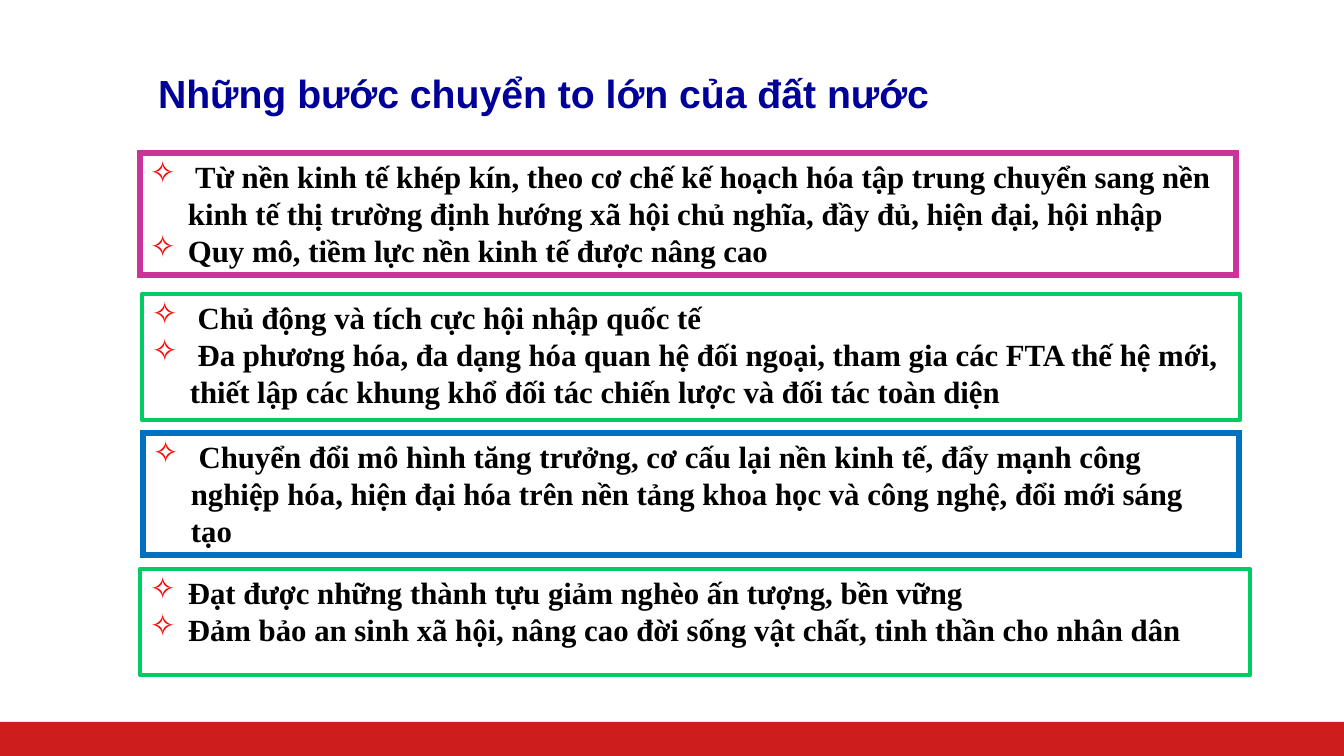
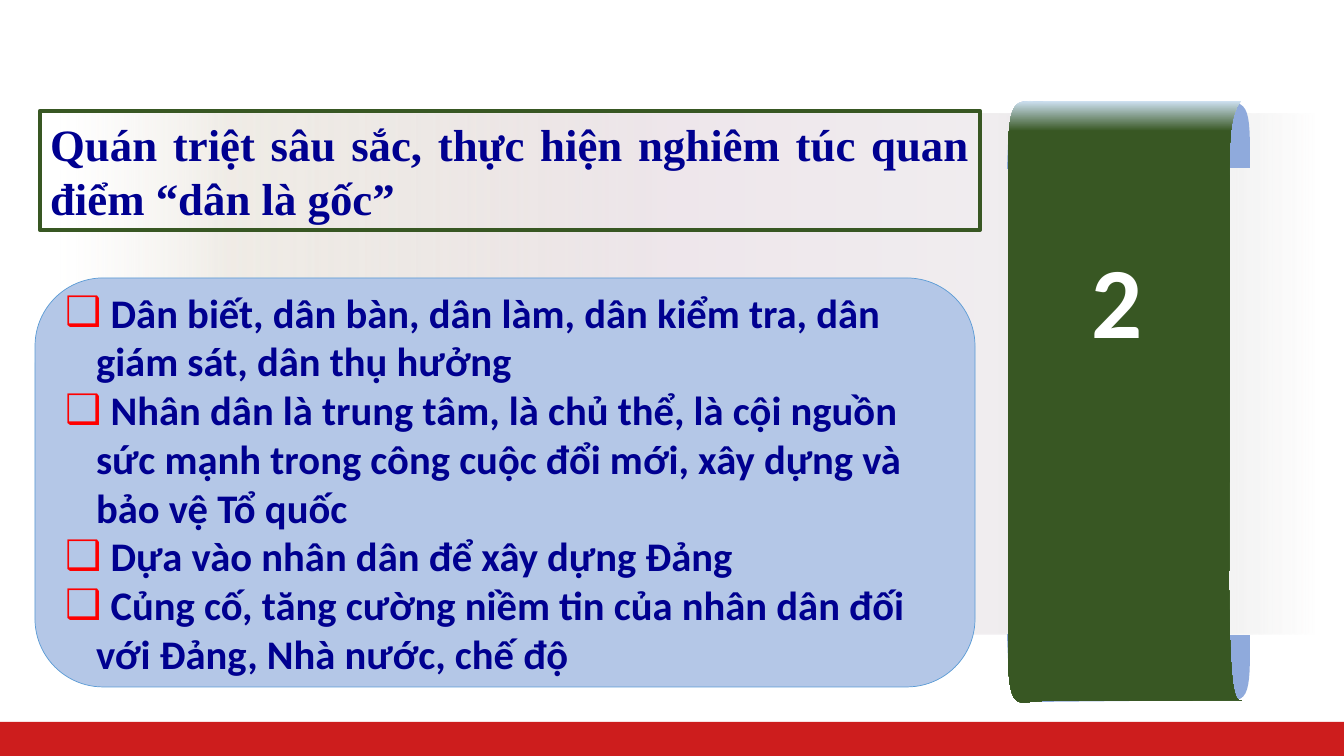
from lxml import etree
from pptx import Presentation
from pptx.dml.color import RGBColor
from pptx.enum.shapes import MSO_SHAPE as Preset
from pptx.enum.text import MSO_ANCHOR as Anchor, MSO_AUTO_SIZE as AutoSize, PP_ALIGN as Align
from pptx.oxml.ns import qn
from pptx.util import Emu, Pt

EMU_PER_PX = 12192000 / 1344
SLIDE_SIZE = (1344, 756)
COLORS = {
    "band": "CD1D1D", "title": "000099", "heading": "000090", "text": "000000",
    "white": "FFFFFF", "bullet": "FF0000", "magenta": "CC3399", "green": "00CC66",
    "blue": "0070C0", "ribbon": "385723", "curl": "8FAADC",
    "card": "B4C7E7", "card_edge": "5B9BD5",
}
# Gradient stops: position, colour, opacity (all but colour in percent)
PANEL_STOPS = [(0, "C8C7C6", 0), (25, "F0EDEF", 100), (50, "EEE6EB", 100),
               (85, "E2DCD1", 52), (98, "EFEBE5", 0)]
RIBBON_STOPS = [(0, "B5D2EC", 100), (0, "CEE1F2", 100), (5, COLORS["ribbon"], 100)]

# Outlines in px from the ribbon's corner: a pair is a corner, a six is a curve
CURL = [(243, 67), (223, 67), (0, 68), (2, 13, 3, -1, 23, 0),
        (226, 2), (244, 1, 243, 23, 243, 67)]
RIBBON = [(234, 0), (42, 0), (9, 3, 1, -15, 1, 68), (1, 507),
          (-1, 621, 7, 600, 35, 600), (235, 599), (226, 603, 223, 580, 222, 486),
          (223, 135), (223, 55, 219, 18, 234, 0)]
RIBBON_HEIGHT = 601

# Box, edge colour, edge width in points, items
CHANGES = [
    ((140, 153, 1096, 122), "magenta", 4.5, [
        " Từ nền kinh tế khép kín, theo cơ chế kế hoạch hóa tập trung chuyển sang nền kinh tế thị trường định hướng xã hội chủ nghĩa, đầy đủ, hiện đại, hội nhập",
        "Quy mô, tiềm lực nền kinh tế được nâng cao"]),
    ((142, 294, 1098, 126), "green", 3, [
        " Chủ động và tích cực hội nhập quốc tế",
        " Đa phương hóa, đa dạng hóa quan hệ đối ngoại, tham gia các FTA thế hệ mới, thiết lập các khung khổ đối tác chiến lược và đối tác toàn diện"]),
    ((143, 433, 1096, 122), "blue", 4.5, [
        " Chuyển đổi mô hình tăng trưởng, cơ cấu lại nền kinh tế, đẩy mạnh công nghiệp hóa, hiện đại hóa trên nền tảng khoa học và công nghệ, đổi mới sáng tạo"]),
    ((140, 569, 1110, 106), "green", 3, [
        "Đạt được những thành tựu giảm nghèo ấn tượng, bền vững",
        "Đảm bảo an sinh xã hội, nâng cao đời sống vật chất, tinh thần cho nhân dân"]),
]
PEOPLE = [
    " Dân biết, dân bàn, dân làm, dân kiểm tra, dân giám sát, dân thụ hưởng",
    " Nhân dân là trung tâm, là chủ thể, là cội nguồn sức mạnh trong công cuộc đổi mới, xây dựng và bảo vệ Tổ quốc",
    " Dựa vào nhân dân để xây dựng Đảng",
    " Củng cố, tăng cường niềm tin của nhân dân đối với Đảng, Nhà nước, chế độ",
]


def px(length):
    return Emu(round(length * EMU_PER_PX))


def rgb(name):
    return RGBColor.from_string(COLORS[name])


def place(shape, box):
    shape.left, shape.top, shape.width, shape.height = map(px, box)


def paint(shape, fill=None, edge=None, width=1):
    if fill:
        shape.fill.solid()
        shape.fill.fore_color.rgb = rgb(fill)
    else:
        shape.fill.background()
    if edge:
        shape.line.color.rgb = rgb(edge)
        shape.line.width = Pt(width)
    else:
        shape.line.fill.background()


def paint_gradient(shape, stops, angle):
    shape.line.fill.background()
    shape.fill.gradient()
    gradient = shape.element.spPr.find(qn("a:gradFill"))
    stop_list = gradient.find(qn("a:gsLst"))
    for old in list(stop_list):
        stop_list.remove(old)
    for position, color, opacity in stops:
        stop = etree.SubElement(stop_list, qn("a:gs"), pos=str(position * 1000))
        tint = etree.SubElement(stop, qn("a:srgbClr"), val=color)
        if opacity < 100:
            etree.SubElement(tint, qn("a:alpha"), val=str(opacity * 1000))
    gradient.find(qn("a:lin")).set("ang", str(angle * 60000))


def add_preset(slide, preset, box):
    shape = slide.shapes.add_shape(preset, *map(px, box))
    shape.shadow.inherit = False
    return shape


def add_outline(slide, corner, outline):
    """Draw a closed outline, flattening its Bézier curves."""
    points = [outline[0]]
    for step in outline[1:]:
        if len(step) == 2:
            points.append(step)
            continue
        controls = [points[-1], step[:2], step[2:4], step[4:]]
        for i in range(1, 13):
            t = i / 12
            weights = ((1 - t) ** 3, 3 * t * (1 - t) ** 2, 3 * t * t * (1 - t), t ** 3)
            points.append(tuple(sum(w * c[axis] for w, c in zip(weights, controls))
                                for axis in (0, 1)))
    vertices = [(px(corner[0] + x), px(corner[1] + y)) for x, y in points]
    builder = slide.shapes.build_freeform(*vertices[0])
    builder.add_line_segments(vertices[1:], close=True)
    shape = builder.convert_to_shape()
    shape.shadow.inherit = False
    return shape


def style(paragraph, font, size, color, align=Align.LEFT, spacing=1.0):
    paragraph.alignment = align
    paragraph.line_spacing = spacing
    paragraph.space_before = Pt(0)
    paragraph.font.name = font
    paragraph.font.size = Pt(size)
    paragraph.font.bold = True
    paragraph.font.color.rgb = rgb(color)


def write_bullets(shape, items, mark, indent, anchor, **look):
    frame = shape.text_frame
    frame.word_wrap = True
    frame.auto_size = AutoSize.NONE
    frame.vertical_anchor = anchor
    for i, item in enumerate(items):
        paragraph = frame.add_paragraph() if i else frame.paragraphs[0]
        paragraph.text = item
        properties = paragraph._p.get_or_add_pPr()
        properties.set("marL", str(px(indent)))
        properties.set("indent", str(-px(indent)))
        bullet_color = etree.SubElement(properties, qn("a:buClr"))
        etree.SubElement(bullet_color, qn("a:srgbClr"), val=COLORS["bullet"])
        etree.SubElement(properties, qn("a:buChar"), char=mark)
        style(paragraph, **look)


def write_title(slide, box, text, **look):
    title = slide.shapes.title
    place(title, box)
    title.text = text
    title.text_frame.word_wrap = True
    title.text_frame.auto_size = AutoSize.NONE
    title.text_frame.vertical_anchor = Anchor.MIDDLE
    style(title.text_frame.paragraphs[0], **look)
    return title


def add_master_band(prs, slide):
    band = add_preset(slide, Preset.RECTANGLE, (0, 722, SLIDE_SIZE[0], 34))
    paint(band, "band")
    prs.slide_master.shapes.element.append(band.element)


def add_change_box(slide, box, edge, width, items):
    change = add_preset(slide, Preset.RECTANGLE, box)
    paint(change, "white", edge, width)
    if width > 4:
        etree.SubElement(change.element.spPr.find(qn("a:ln")), qn("a:miter"), lim="800000")
    write_bullets(change, items, "✧", 38, Anchor.TOP,
                  font="Times New Roman", size=22, color="text")


def add_ribbon(slide, left, top):
    flipped = [tuple(RIBBON_HEIGHT - v if i % 2 else v for i, v in enumerate(step))
               for step in CURL]
    for outline in (CURL, flipped):
        paint(add_outline(slide, (left, top), outline), "curl")
    paint_gradient(add_outline(slide, (left, top), RIBBON), RIBBON_STOPS, 90)
    number = slide.shapes.add_textbox(*map(px, (left, top + 132, 221, 283)))
    number.text_frame.word_wrap = True
    number.text_frame.text = "2"
    style(number.text_frame.paragraphs[0], "Calibri", 72, "white", Align.CENTER)


def fill_card(card, box):
    """Turn the body placeholder into a rounded card with the list."""
    place(card, box)
    geometry = etree.SubElement(card.element.spPr, qn("a:prstGeom"), prst="roundRect")
    etree.SubElement(geometry, qn("a:avLst"))
    paint(card, "card", "card_edge", 0.5)
    write_bullets(card, PEOPLE, "❑", 31, Anchor.MIDDLE,
                  font="Calibri", size=29, color="heading")


def build_changes(slide):
    write_title(slide, (148, 58, 1165, 76), "Những bước chuyển to lớn của đất nước",
                font="Arial", size=28, color="title", spacing=0.9)
    for change in CHANGES:
        add_change_box(slide, *change)


def build_people(slide):
    panel = add_preset(slide, Preset.RECTANGLE, (35, 114, 1280, 520))
    paint_gradient(panel, PANEL_STOPS, 180)
    slide.shapes.element.insert(2, panel.element)
    heading = write_title(slide, (40, 111, 940, 119),
                          "Quán triệt sâu sắc, thực hiện nghiêm túc quan điểm “dân là gốc”",
                          font="Times New Roman", size=32, color="heading",
                          align=Align.JUSTIFY)
    paint(heading, edge="ribbon", width=3)
    fill_card(slide.placeholders[1], (35, 278, 940, 409))
    add_ribbon(slide, 1007, 101)


def main():
    prs = Presentation()
    prs.slide_width, prs.slide_height = map(px, SLIDE_SIZE)
    title_only, title_and_body = prs.slide_layouts[5], prs.slide_layouts[1]
    changes = prs.slides.add_slide(title_only)
    add_master_band(prs, changes)
    build_changes(changes)
    build_people(prs.slides.add_slide(title_and_body))
    prs.save("out.pptx")


if __name__ == "__main__":
    main()
